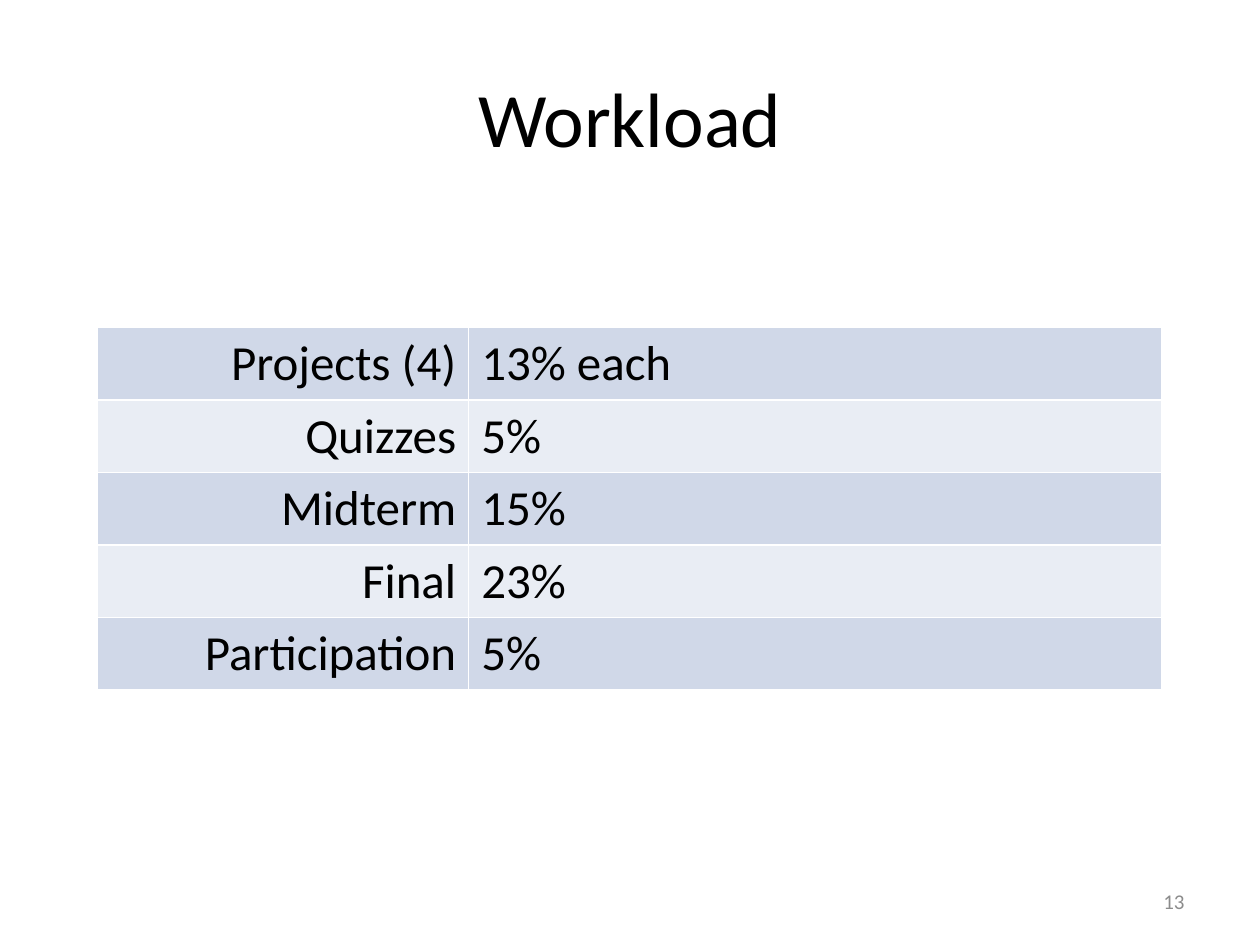
"""Build the course workload slide with its grading table."""
from dataclasses import dataclass

from pptx import Presentation
from pptx.dml.color import RGBColor
from pptx.enum import text
from pptx.util import Inches, Pt


@dataclass(frozen=True)
class Theme:
    font: str = "Calibri"
    ink: str = "000000"
    muted: str = "8C8C8C"
    bands: tuple = ("D0D8E8", "E9EDF4")
    title_size: int = 44
    table_size: int = 28
    number_size: int = 12


theme = Theme()
align = text.PP_ALIGN
weights = [
    ("Projects (4)", "13% each"),
    ("Quizzes", "5%"),
    ("Midterm", "15%"),
    ("Final", "23%"),
    ("Participation", "5%"),
]


def write(frame, words, size, color, alignment):
    para = frame.paragraphs[0]
    para.alignment = alignment
    span = para.add_run()
    span.text = words
    span.font.color.rgb = RGBColor.from_string(color)
    for name, value in {"name": theme.font, "size": Pt(size)}.items():
        setattr(span.font, name, value)


def place(box, left, top, width, height):
    bounds = {"left": left, "top": top, "width": width, "height": height}
    for name, value in bounds.items():
        setattr(box, name, Inches(value))
    layout = {"word_wrap": True, "vertical_anchor": text.MSO_ANCHOR.MIDDLE}
    for name, value in layout.items():
        setattr(box.text_frame, name, value)


deck = Presentation()
deck.slide_width, deck.slide_height = Inches(10), Inches(7.5)
page = deck.slides.add_slide(deck.slide_layouts[5])

title = page.shapes.title
place(title, 0.5, 0.3, 9, 1.25)
write(title.text_frame, "Workload", theme.title_size, theme.ink, align.CENTER)

table = page.shapes.add_table(
    len(weights), 2, Inches(0.77), Inches(2.6), Inches(8.45), Inches(2.85)
).table
table.first_row = False
for column, width in zip(table.columns, (2.95, 5.5)):
    column.width = Inches(width)
for index, row in enumerate(weights):
    band = theme.bands[index % 2]
    for cell, words, side in zip(table.rows[index].cells, row, (align.RIGHT, align.LEFT)):
        cell.fill.solid()
        cell.fill.fore_color.rgb = RGBColor.from_string(band)
        write(cell.text_frame, words, theme.table_size, theme.ink, side)

number = page.shapes.add_textbox(0, 0, 0, 0)
place(number, 7.17, 6.95, 2.33, 0.4)
write(number.text_frame, "13", theme.number_size, theme.muted, align.RIGHT)

deck.save("out.pptx")
